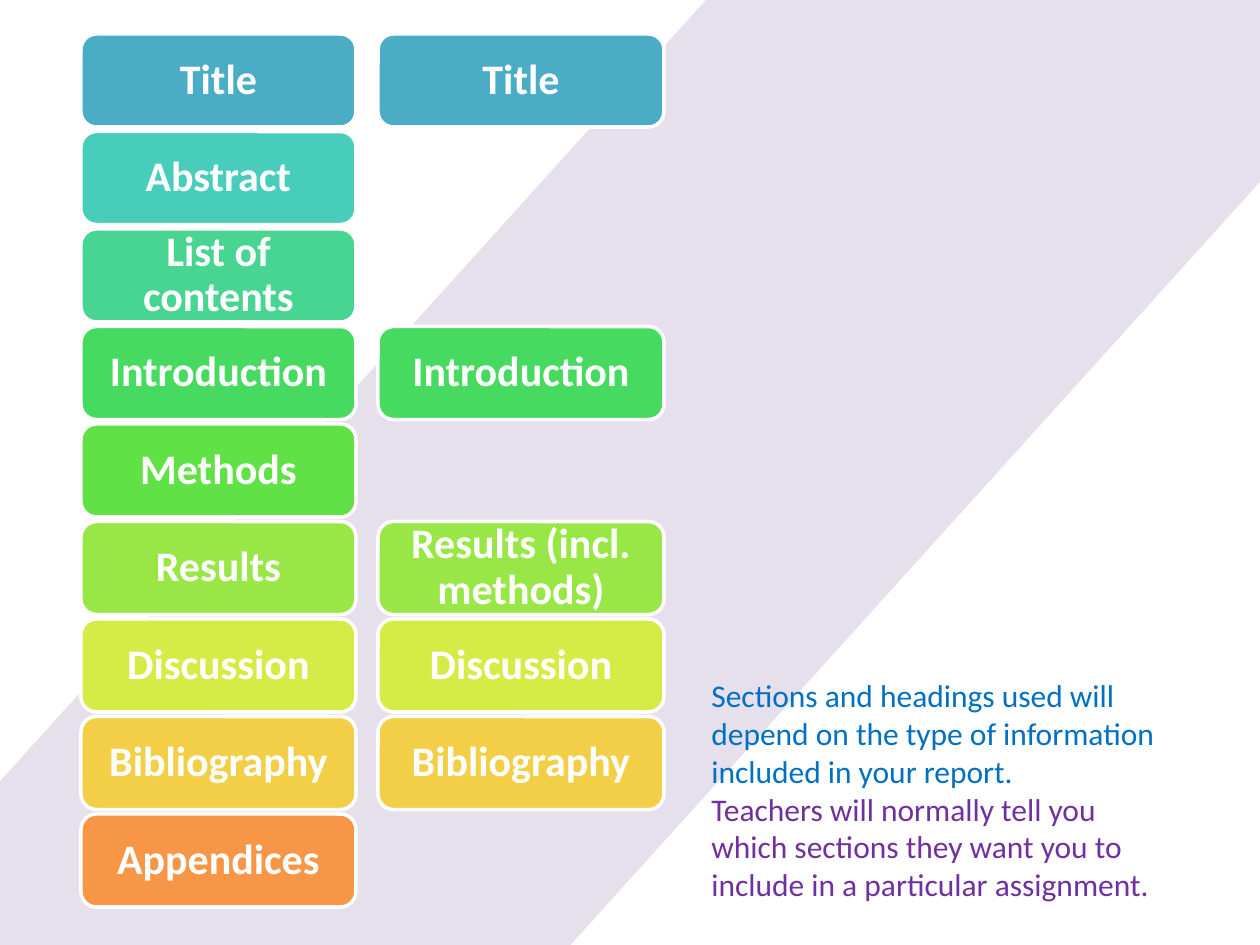
import pptx
import pptx.util
import pptx.dml.color
import pptx.enum.shapes
import pptx.enum.text
from dataclasses import dataclass

EMU_PER_PX = 914400 / 126
SHAPES = pptx.enum.shapes.MSO_SHAPE
ANCHOR = pptx.enum.text.MSO_ANCHOR
ALIGN = pptx.enum.text.PP_ALIGN


@dataclass(frozen=True)
class Theme:
    font: str = "Calibri"
    heading_size: int = 24
    note_size: int = 18
    outline_width: int = 2
    white: str = "FFFFFF"
    band: str = "E6E0EC"
    blue: str = "0070C0"
    purple: str = "7030A0"
    rows: tuple = ("4BACC6", "49CDBB", "48D491", "47DA61", "60E146",
                   "98E746", "D5EC46", "F2CF46", "F79646")


THEME = Theme()
FULL_REPORT = ("Title", "Abstract", "List of contents", "Introduction", "Methods",
               "Results", "Discussion", "Bibliography", "Appendices")
SHORT_REPORT = ("Title", None, None, "Introduction", None,
                "Results (incl. methods)", "Discussion", "Bibliography", None)
NOTES = (
    ("Sections and headings used will depend on the type of information "
     "included in your report.", THEME.blue),
    ("Teachers will normally tell you which sections they want you to "
     "include in a particular assignment.", THEME.purple),
)


def px(length):
    return pptx.util.Emu(round(length * EMU_PER_PX))


def rgb(value):
    return pptx.dml.color.RGBColor.from_string(value)


def write(para, text, *, size, color, bold=False, align=ALIGN.LEFT, spacing=1.0):
    para.alignment = align
    para.line_spacing = spacing
    span = para.add_run()
    span.text = text
    span.font.name = THEME.font
    span.font.size = pptx.util.Pt(size)
    span.font.bold = bold
    span.font.color.rgb = rgb(color)


def add_block(page, kind, bounds, fill, outline=None):
    block = page.shapes.add_shape(kind, *map(px, bounds))
    block.shadow.inherit = False
    block.fill.solid()
    block.fill.fore_color.rgb = rgb(fill)
    if outline:
        block.line.color.rgb = rgb(outline)
        block.line.width = pptx.util.Pt(THEME.outline_width)
    else:
        block.line.fill.background()
    return block


def add_band(page):
    band = add_block(page, SHAPES.RECTANGLE, (-160, 204, 1600, 533), THEME.band)
    band.rotation = 312.1


def add_section(page, text, bounds, fill):
    section = add_block(page, SHAPES.ROUNDED_RECTANGLE, bounds, fill, THEME.white)
    frame = section.text_frame
    frame.word_wrap = True
    frame.vertical_anchor = ANCHOR.MIDDLE
    frame.margin_left = frame.margin_right = px(14)
    frame.margin_top = frame.margin_bottom = px(5)
    write(frame.paragraphs[0], text, size=THEME.heading_size, color=THEME.white,
          bold=True, align=ALIGN.CENTER, spacing=0.9)


def add_column(page, headings, left, width, top=34, height=93, last_top=814):
    pitch = (last_top - top) / (len(headings) - 1)
    for row, (heading, fill) in enumerate(zip(headings, THEME.rows)):
        if heading:
            add_section(page, heading, (left, top + row * pitch, width, height), fill)


def add_notes(page):
    frame = page.shapes.add_textbox(*map(px, (699, 670, 476, 242))).text_frame
    frame.word_wrap = True
    for index, (text, color) in enumerate(NOTES):
        para = frame.add_paragraph() if index else frame.paragraphs[0]
        write(para, text, size=THEME.note_size, color=color)


def main():
    deck = pptx.Presentation()
    deck.slide_width, deck.slide_height = px(1260), px(945)
    page = deck.slides.add_slide(deck.slide_layouts.get_by_name("Blank"))
    add_band(page)
    add_column(page, FULL_REPORT, left=81, width=275)
    add_column(page, SHORT_REPORT, left=378, width=286)
    add_notes(page)
    deck.save("out.pptx")


if __name__ == "__main__":
    main()
